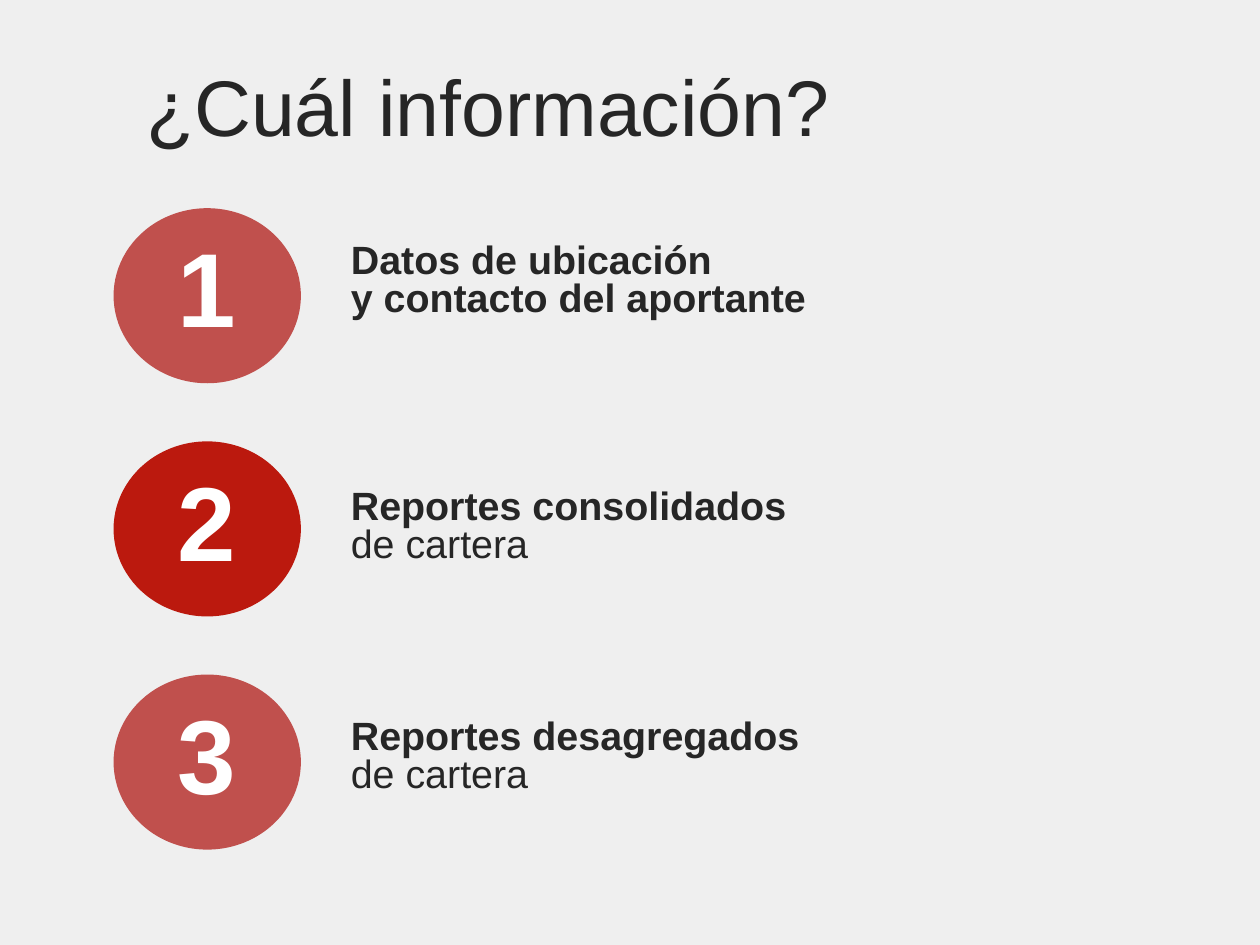
from pptx import Presentation
from pptx.dml.color import RGBColor
from pptx.enum import shapes, text
from pptx.util import Cm, Pt

DARK, WHITE, ROSE, RED = "262626", "FFFFFF", "C0504D", "BB190E"


def paint(fill, color):
    fill.solid()
    fill.fore_color.rgb = RGBColor.from_string(color)


def write(home, box, lines, size, color, align, gap=1.0, pad=(0.33, 0.18)):
    """Add a text box to home; lines holds (words, bold) pairs."""
    frame = home.add_textbox(*map(Cm, box)).text_frame
    frame.word_wrap = True
    frame.auto_size = text.MSO_AUTO_SIZE.SHAPE_TO_FIT_TEXT
    frame.margin_left = frame.margin_right = Cm(pad[0])
    frame.margin_top = frame.margin_bottom = Cm(pad[1])
    for i, (words, bold) in enumerate(lines):
        para = frame.add_paragraph() if i else frame.paragraphs[0]
        para.text = words
        para.alignment = align
        para.line_spacing = gap
        font = para.font
        font.name, font.size, font.bold = "Arial", Pt(size), bold
        paint(font.fill, color)


deck = Presentation()
deck.slide_width, deck.slide_height = Cm(33.83), Cm(25.37)
slide = deck.slides.add_slide(deck.slide_layouts[6])
paint(slide.background.fill, "EFEFEF")

left, mid = text.PP_ALIGN.LEFT, text.PP_ALIGN.CENTER
write(slide.shapes, (1.1, 2.06, 24, 2.26), [("¿Cuál información?", False)],
      60, DARK, mid, 0.7)

# Circle colour, label top, label lines
items = [
    (ROSE, 6.38, [("Datos de ubicación", True), ("y contacto del aportante", True)]),
    (RED, 12.98, [("Reportes consolidados", True), ("de cartera", False)]),
    (ROSE, 19.15, [("Reportes desagregados", True), ("de cartera", False)]),
]
for i, (color, y, lines) in enumerate(items):
    top = 5.59 + 6.26 * i
    badge = slide.shapes.add_group_shape().shapes
    disc = badge.add_shape(shapes.MSO_SHAPE.OVAL, Cm(3.05), Cm(top), Cm(5.03), Cm(4.7))
    disc.shadow.inherit = False
    disc.line.fill.background()
    paint(disc.fill, color)
    write(badge, (3.05, top + 0.26, 5.03, 3.68), [(str(i + 1), True)],
          80, WHITE, mid, pad=(0.25, 0.13))
    write(slide.shapes, (9.09, y, 13.34, 2.44), lines, 30, DARK, left, 0.8)

deck.save("out.pptx")
